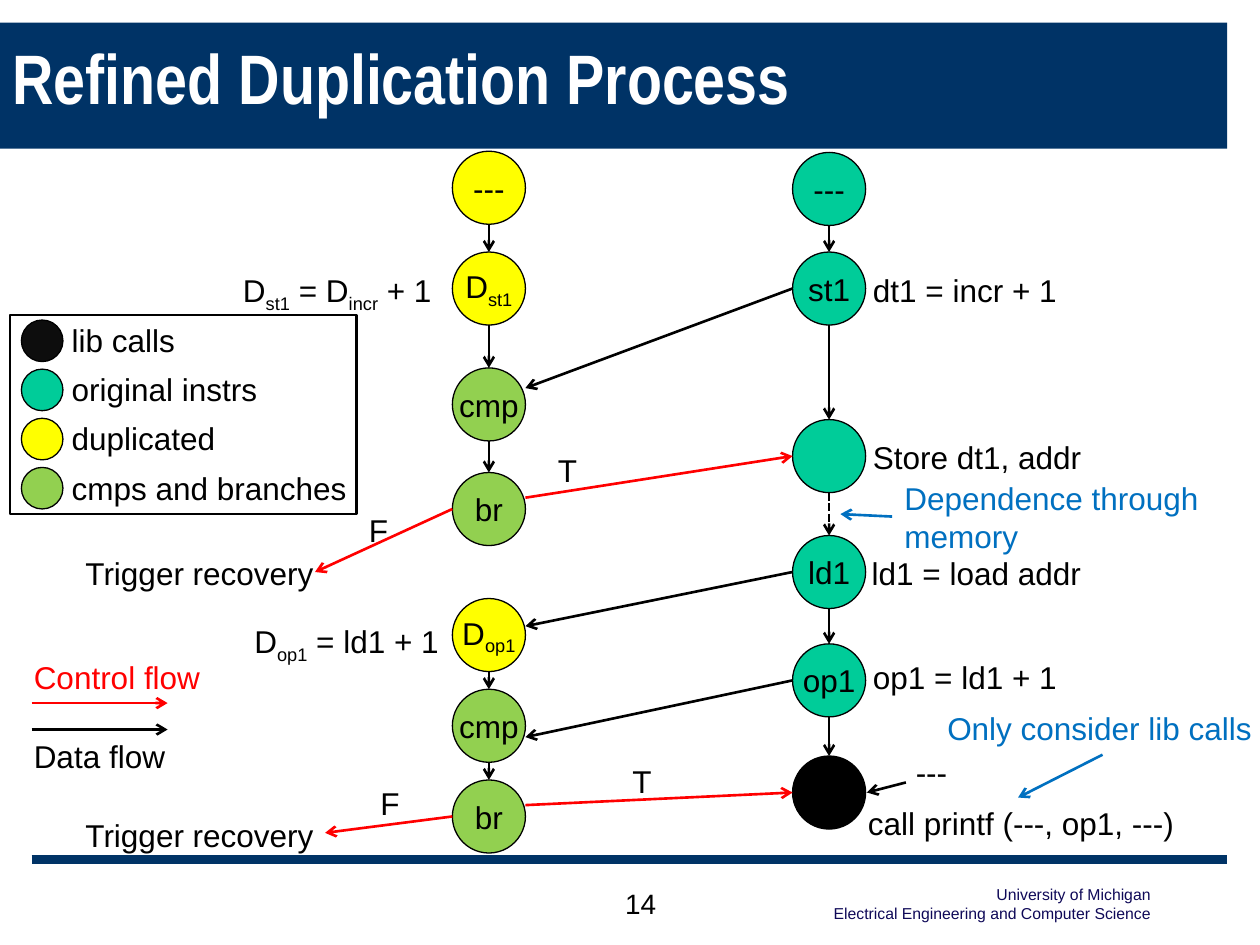
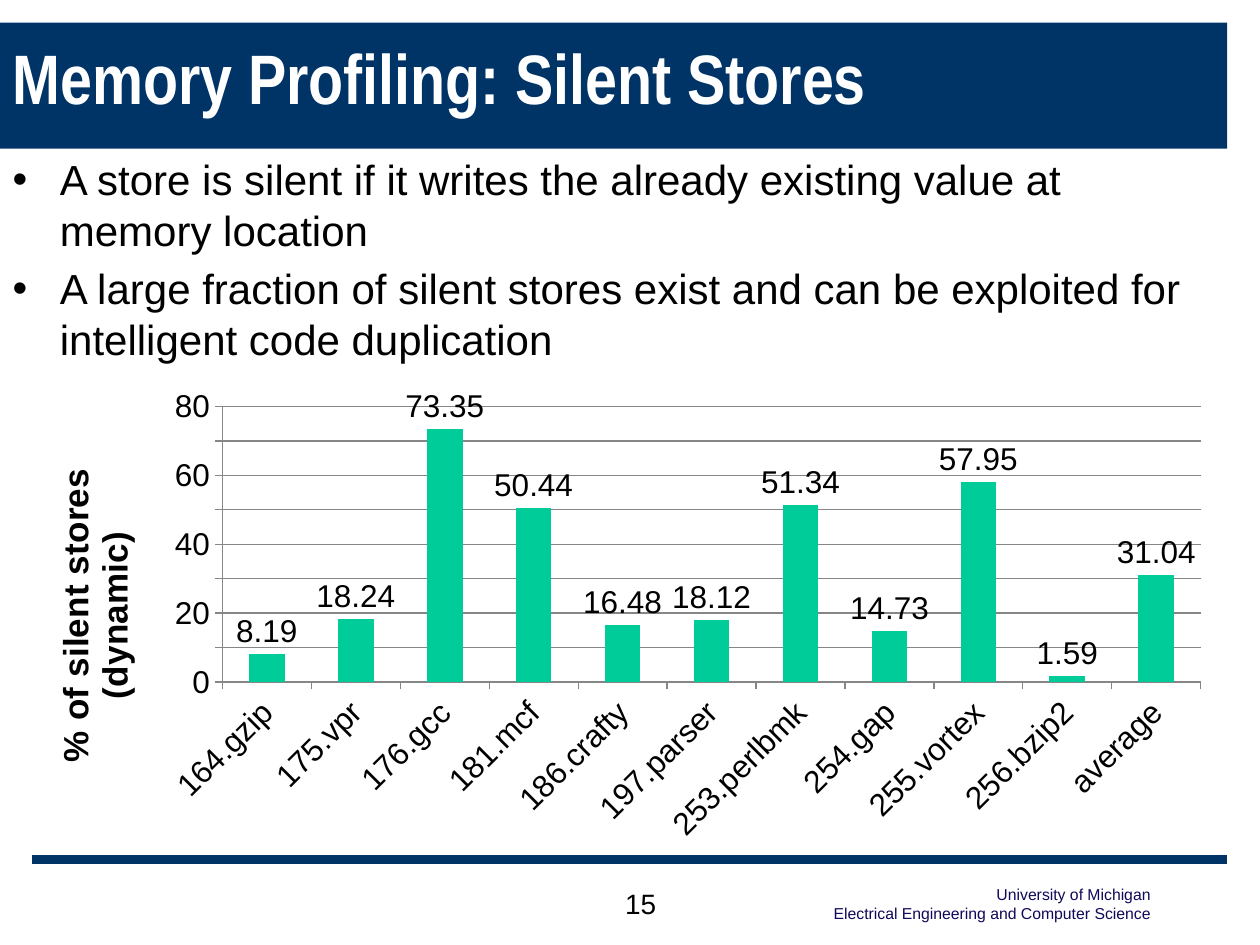
from lxml import etree
from pptx import Presentation
from pptx import util as u
from pptx.chart import data as chart_data
from pptx.dml.color import RGBColor
from pptx.enum import chart as charts, dml, shapes, text
from pptx.oxml import ns

NAVY, TEAL, YELLOW, GREEN = "003366", "00CC99", "FFFF00", "92D050"
BLACK, WHITE, RED, BLUE, GREY = "000000", "FFFFFF", "FF0000", "0070C0", "868686"
TITLE_FONT = {"name": "Arial Narrow", "size": u.Pt(40), "bold": True}
BODY_FONT = {"name": "Arial", "size": u.Pt(24)}
LABEL_FONT = {"name": "Arial", "size": u.Pt(18)}
NUMBER_FONT = {"name": "Arial", "size": u.Pt(16)}
FOOTER_FONT = {"name": "Arial", "size": u.Pt(9)}
AXIS_TITLE_FONT = {"name": "Arial", "size": u.Pt(20), "bold": True}
NODE = 0.58
DUPLICATE_LEFT, SOURCE_LEFT = 3.59, 6.29


def inches(*values):
    return [u.Inches(value) for value in values]


def paint(target, colour):
    target.rgb = RGBColor.from_string(colour)


def style(font, values, colour=BLACK):
    for name, value in values.items():
        setattr(font, name, value)
    paint(font.color, colour)


def fill_with(shape, colour):
    shape.fill.solid()
    paint(shape.fill.fore_color, colour)


def write(para, words, values, colour=BLACK):
    for index, part in enumerate(words.split("|")):
        span = para.add_run()
        span.text = part
        style(span.font, values, colour)
        if index % 2:
            span._r.get_or_add_rPr().set("baseline", "-25000")


def label(page, at, lines, colour=BLACK, values=LABEL_FONT, align=text.PP_ALIGN.LEFT, wrap=True):
    box = page.shapes.add_textbox(*inches(*at))
    frame = box.text_frame
    frame.word_wrap = wrap
    for index, line in enumerate(lines.split("\n")):
        para = frame.add_paragraph() if index else frame.paragraphs[0]
        para.alignment = align
        write(para, line, values, colour)
    return box


def add_shape(page, kind, at, colour, border=None, width=0.75):
    shape = page.shapes.add_shape(kind, *inches(*at))
    shape.shadow.inherit = False
    if colour:
        fill_with(shape, colour)
    else:
        shape.fill.background()
    if border:
        paint(shape.line.color, border)
        shape.line.width = u.Pt(width)
    else:
        shape.line.fill.background()
    return shape


def circle(page, left, top, size, colour, words=""):
    node = add_shape(page, shapes.MSO_SHAPE.OVAL, (left, top, size, size), colour, BLACK)
    if words:
        frame = node.text_frame
        frame.word_wrap = False
        frame.vertical_anchor = text.MSO_ANCHOR.MIDDLE
        for side in ("left", "right", "top", "bottom"):
            setattr(frame, f"margin_{side}", 0)
        para = frame.paragraphs[0]
        para.alignment = text.PP_ALIGN.CENTER
        write(para, words, LABEL_FONT)


def line(page, start, end, colour=BLACK, width=1.5, head=True, dashed=False):
    connector = page.shapes.add_connector(
        shapes.MSO_CONNECTOR.STRAIGHT, *inches(*start, *end))
    paint(connector.line.color, colour)
    connector.line.width = u.Pt(width)
    if dashed:
        connector.line.dash_style = dml.MSO_LINE.SQUARE_DOT
    properties = connector.element.spPr
    if head:
        etree.SubElement(properties.find(ns.qn("a:ln")), ns.qn("a:tailEnd"), type="arrow")
    etree.SubElement(properties, ns.qn("a:effectLst"))


def start_page(deck, layout, title, number):
    page = deck.slides.add_slide(deck.slide_layouts[layout])
    heading = page.shapes.title
    band = add_shape(page, shapes.MSO_SHAPE.RECTANGLE, (0, 0.18, 9.74, 1), NAVY)
    heading.element.addprevious(band.element)
    place(heading, (0, 0.17, 9.5, 0.88))
    heading.text_frame.vertical_anchor = text.MSO_ANCHOR.MIDDLE
    para = heading.text_frame.paragraphs[0]
    para.alignment = text.PP_ALIGN.LEFT
    write(para, title, TITLE_FONT, WHITE)
    line(page, (0.25, 6.82), (9.74, 6.82), NAVY, 5, head=False)
    label(page, (6.51, 6.97, 2.72, 0.4),
          "University of Michigan\nElectrical Engineering and Computer Science",
          "0F0958", FOOTER_FONT, text.PP_ALIGN.RIGHT, wrap=False)
    box = label(page, (3.92, 6.97, 2.33, 0.4), str(number),
                values=NUMBER_FONT, align=text.PP_ALIGN.CENTER)
    box.text_frame.vertical_anchor = text.MSO_ANCHOR.MIDDLE
    return page


def place(shape, at):
    for name, value in zip(("left", "top", "width", "height"), inches(*at)):
        setattr(shape, name, value)
    shape.text_frame.auto_size = text.MSO_AUTO_SIZE.NONE
    shape.text_frame.word_wrap = True


def node_chain(page, left, nodes, breaks=(), dashes=()):
    middle = left + NODE / 2
    for index, (top, colour, words) in enumerate(nodes):
        circle(page, left, top, NODE, colour, words)
        if index and index not in breaks:
            above = nodes[index - 1][0] + NODE
            line(page, (middle, above), (middle, top), dashed=index in dashes)


def legend(page, left, top):
    add_shape(page, shapes.MSO_SHAPE.RECTANGLE, (left, top, 2.75, 1.58), None, BLACK, 1.5)
    entries = (("0D0D0D", "lib calls"), (TEAL, "original instrs"),
               (YELLOW, "duplicated"), (GREEN, "cmps and branches"))
    for index, (colour, words) in enumerate(entries):
        row = top + 0.39 * index
        circle(page, left + 0.09, row + 0.04, 0.33, colour)
        label(page, (left + 0.39, row, 2.42, 0.4), words)


def flow_key(page, left, top):
    for words, colour, text_top, line_top in (
            ("Control flow", RED, 0, 0.41), ("Data flow", BLACK, 0.63, 0.62)):
        label(page, (left, top + text_top, 1.67, 0.4), words, colour)
        line(page, (left + 0.08, top + line_top), (left + 1.16, top + line_top), colour)


def branch(page, start, recovery, target, false_at, true_at, recovery_top):
    line(page, (DUPLICATE_LEFT, start), recovery, RED)
    line(page, (DUPLICATE_LEFT + NODE, start - 0.09), (SOURCE_LEFT, target), RED)
    label(page, (*false_at, 0.33, 0.4), "F")
    label(page, (*true_at, 0.33, 0.4), "T")
    label(page, (0.58, recovery_top, 2.42, 0.4), "Trigger recovery")


def duplication_page(deck):
    page = start_page(deck, 5, "Refined Duplication Process", 14)
    node_chain(page, DUPLICATE_LEFT, (
        (1.2, YELLOW, "---"), (2, YELLOW, "D|st1"), (2.92, GREEN, "cmp"), (3.75, GREEN, "br"),
        (4.75, YELLOW, "D|op1"), (5.47, GREEN, "cmp"), (6.19, GREEN, "br")), breaks=(4,))
    node_chain(page, SOURCE_LEFT, (
        (1.21, TEAL, "---"), (2, TEAL, "st1"), (3.33, TEAL, ""), (4.25, TEAL, "ld1"),
        (5.11, TEAL, "op1"), (6, BLACK, "")), dashes=(3,))
    for start, end in ((2.29, 3.08), (4.54, 4.97), (5.4, 5.85)):
        line(page, (SOURCE_LEFT, start), (DUPLICATE_LEFT + NODE, end))
    branch(page, 4.04, (2.5, 4.54), 3.62, (2.83, 4.01), (4.33, 3.53), 4.35)
    branch(page, 6.48, (2.58, 6.61), 6.29, (2.92, 6.17), (4.92, 6), 6.43)
    for left, top, width, words in (
            (1.83, 2.1, 2.08, "D|st1| = D|incr| + 1"),
            (1.92, 4.89, 2.33, "D|op1| = ld1 + 1"),
            (6.83, 2.1, 1.83, "dt1 = incr + 1"),
            (6.83, 3.43, 2.25, "Store dt1, addr"),
            (6.82, 4.35, 2.25, "ld1 = load addr"),
            (6.83, 5.17, 2.08, "op1 = ld1 + 1"),
            (7.17, 5.93, 0.67, "---"),
            (6.79, 6.33, 3, "call printf (---, op1, ---)")):
        label(page, (left, top, width, 0.4), words)
    line(page, (7.19, 6.21), (6.88, 6.29))
    label(page, (7.08, 3.75, 2.67, 0.71), "Dependence through memory", BLUE)
    line(page, (7.08, 4.1), (6.67, 4.08), BLUE)
    label(page, (7.42, 5.58, 2.67, 0.4), "Only consider lib calls", BLUE)
    line(page, (8.75, 5.99), (8.08, 6.33), BLUE)
    legend(page, 0.08, 2.5)
    flow_key(page, 0.17, 5.17)


def bullet_list(page, at, items):
    body = page.placeholders[1]
    place(body, at)
    for index, words in enumerate(items):
        para = body.text_frame.add_paragraph() if index else body.text_frame.paragraphs[0]
        if not index:
            para.space_before = u.Pt(0)
        write(para, words, BODY_FONT)


def set_plot_layout(chart, **fractions):
    area = next(chart.element.iter(ns.qn("c:plotArea")))
    for old in area.findall(ns.qn("c:layout")):
        area.remove(old)
    layout = etree.Element(ns.qn("c:layout"))
    manual = etree.SubElement(layout, ns.qn("c:manualLayout"))
    settings = {"layoutTarget": "inner", "xMode": "edge", "yMode": "edge", **fractions}
    for name, value in settings.items():
        etree.SubElement(manual, ns.qn(f"c:{name}"), val=str(value))
    area.insert(0, layout)


def silent_store_chart(page, at):
    stores = {"164.gzip": 8.19, "175.vpr": 18.24, "176.gcc": 73.35, "181.mcf": 50.44,
              "186.crafty": 16.48, "197.parser": 18.12, "253.perlbmk": 51.34,
              "254.gap": 14.73, "255.vortex": 57.95, "256.bzip2": 1.59, "average": 31.04}
    values = chart_data.CategoryChartData(number_format="0.00")
    values.categories = list(stores)
    values.add_series("Series 1", list(stores.values()))
    chart = page.shapes.add_chart(
        charts.XL_CHART_TYPE.COLUMN_CLUSTERED, *inches(*at), values).chart
    chart.has_legend = chart.has_title = False
    style(chart.font, {"name": "Arial", "size": u.Pt(10)})
    plot = chart.plots[0]
    plot.gap_width = 150
    plot.vary_by_categories = False
    fill_with(plot.series[0].format, TEAL)
    plot.has_data_labels = True
    labels = plot.data_labels
    labels.show_value = True
    labels.number_format = "0.00"
    labels.number_format_is_linked = False
    labels.position = charts.XL_LABEL_POSITION.OUTSIDE_END
    style(labels.font, LABEL_FONT)
    for axis in (chart.category_axis, chart.value_axis):
        style(axis.tick_labels.font, LABEL_FONT)
        axis.major_tick_mark = charts.XL_TICK_MARK.OUTSIDE
        paint(axis.format.line.color, GREY)
    category = next(chart.element.iter(ns.qn("c:catAx")))
    next(category.iter(ns.qn("a:bodyPr"))).set("rot", "-2700000")
    axis = chart.value_axis
    scale = {"minimum_scale": 0, "maximum_scale": 80, "major_unit": 10,
             "has_major_gridlines": True}
    for name, value in scale.items():
        setattr(axis, name, value)
    axis.tick_labels.number_format = "General"
    axis.tick_labels.number_format_is_linked = False
    paint(axis.major_gridlines.format.line.color, GREY)
    write(axis.axis_title.text_frame.paragraphs[0], "% of silent stores (dynamic)",
          AXIS_TITLE_FONT)
    set_plot_layout(chart, x=0.16, y=0.06, w=0.82, h=0.58)


def profiling_page(deck):
    page = start_page(deck, 1, "Memory Profiling: Silent Stores", 15)
    bullet_list(page, (0, 1.17, 9.5, 2), (
        "A store is silent if it writes the already existing value at memory location",
        "A large fraction of silent stores exist and can be exploited for "
        "intelligent code duplication"))
    silent_store_chart(page, (0.25, 3, 9.47, 3.77))


def main():
    deck = Presentation()
    deck.slide_width, deck.slide_height = inches(10, 7.5)
    duplication_page(deck)
    profiling_page(deck)
    deck.save("out.pptx")


if __name__ == "__main__":
    main()
